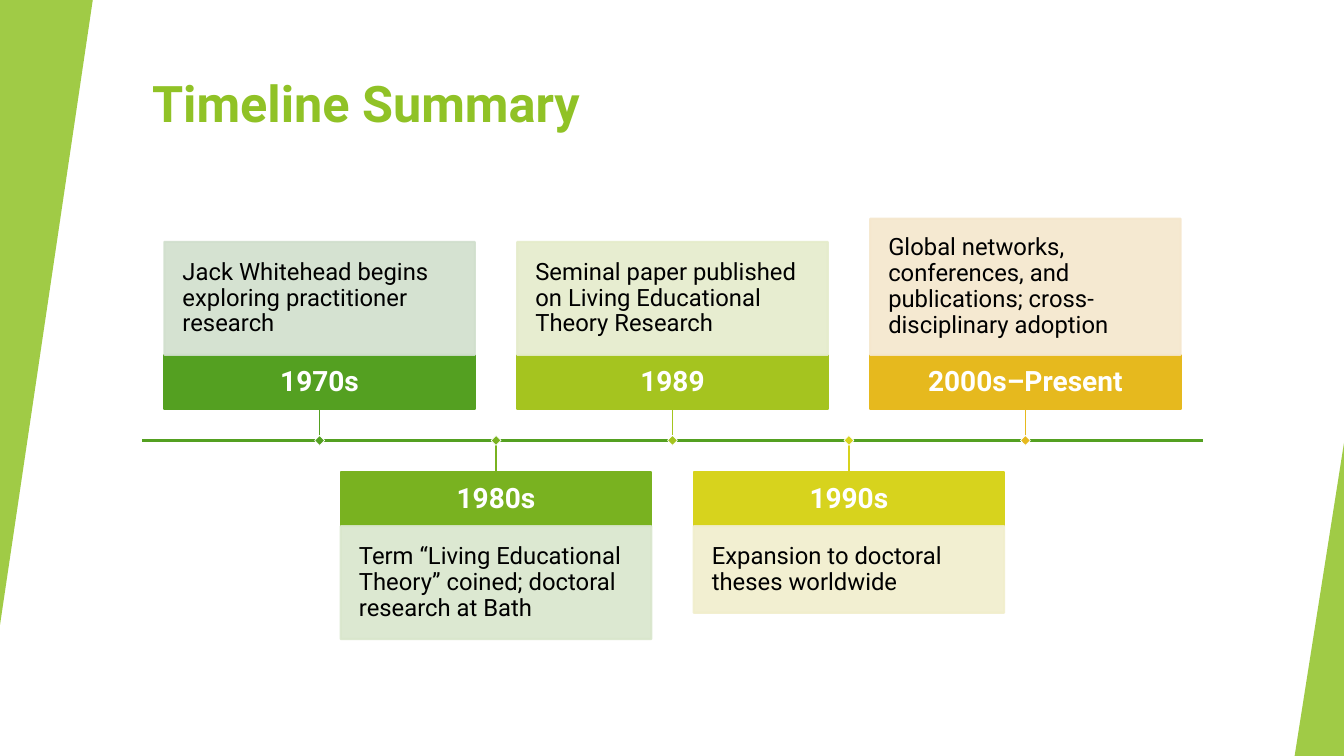
from pptx import Presentation
from pptx.dml.color import RGBColor
from pptx.enum.shapes import MSO_CONNECTOR, MSO_SHAPE
from pptx.enum.text import MSO_ANCHOR, PP_ALIGN
from pptx.oxml.ns import qn
from pptx.util import Inches, Pt
from lxml.etree import SubElement

# Content
TITLE = "Timeline Summary"
COLORS = {"accent": "90C226", "axis": "54A021", "white": "FFFFFF", "black": "000000"}
FONT = "Roboto"
# period, event, strong colour, pale colour, height of the event box
EVENTS = [
    ("1970s", "Jack Whitehead begins exploring practitioner research",
     "54A021", "D1DFCD", 1.12),
    ("1980s", "Term “Living Educational Theory” coined; doctoral research at Bath",
     "79B220", "D9E6CC", 1.12),
    ("1989", "Seminal paper published on Living Educational Theory Research",
     "A5C41F", "E5ECCB", 1.12),
    ("1990s", "Expansion to doctoral theses worldwide",
     "D7D31D", "F1EECC", 0.86),
    ("2000s–Present", "Global networks, conferences, and publications; cross-disciplinary adoption",
     "E6B91E", "F5E7CD", 1.35),
]
# left, top, width, height, rotation
EDGE_TRIANGLES = [(0, 0, 0.92, 6.2, 180), (12.84, 4.39, 0.49, 3.11, 0)]

# Layout in inches
AXIS_LEFT, AXIS_RIGHT, AXIS_Y = 1.41, 11.93, 4.37
STEP = 1.75
BOX_WIDTH, LABEL_HEIGHT, STEM, MARKER = 3.08, 0.54, 0.31, 0.07

deck = Presentation()
deck.slide_width, deck.slide_height = Inches(13.33), Inches(7.5)
page = deck.slides.add_slide(deck.slide_layouts[6])


def set_alpha(fill_parent, percent):
    color = fill_parent.find(qn("a:solidFill")).find(qn("a:srgbClr"))
    SubElement(color, qn("a:alpha")).set("val", str(percent * 1000))


def add_box(kind, left, top, width, height, fill, line=None, line_width=1.5, alpha=100):
    box = page.shapes.add_shape(kind, Inches(left), Inches(top), Inches(width), Inches(height))
    box.shadow.inherit = False
    box.fill.solid()
    box.fill.fore_color.rgb = RGBColor.from_string(fill)
    if line:
        box.line.color.rgb = RGBColor.from_string(line)
        box.line.width = Pt(line_width)
    else:
        box.line.fill.background()
    if alpha < 100:
        set_alpha(box.fill._xPr, alpha)
        if line:
            set_alpha(box.line._ln, alpha)
    return box


def add_line(start, end, color, width):
    line = page.shapes.add_connector(MSO_CONNECTOR.STRAIGHT, *map(Inches, start + end))
    line.line.color.rgb = RGBColor.from_string(color)
    line.line.width = Pt(width)
    SubElement(line._element.spPr, qn("a:effectLst"))
    return line


def write(box, text, size, color, bold=False, align=PP_ALIGN.LEFT,
          anchor=MSO_ANCHOR.MIDDLE, inset=(0.1, 0.05), spacing=0.9):
    frame = box.text_frame
    frame.word_wrap = True
    frame.vertical_anchor = anchor
    frame.margin_left = frame.margin_right = Inches(inset[0])
    frame.margin_top = frame.margin_bottom = Inches(inset[1])
    para = frame.paragraphs[0]
    para.alignment = align
    para.line_spacing = spacing
    span = para.add_run()
    span.text = text
    span.font.name = FONT
    span.font.size = Pt(size)
    span.font.bold = bold
    span.font.color.rgb = RGBColor.from_string(color)


# Title and slanted edges
title = page.shapes.add_textbox(Inches(1.41), Inches(0.67), Inches(11.15), Inches(1.2))
write(title, TITLE, 36, COLORS["accent"], bold=True, anchor=MSO_ANCHOR.TOP, spacing=1.0)
for left, top, width, height, rotation in EDGE_TRIANGLES:
    edge = add_box(MSO_SHAPE.ISOSCELES_TRIANGLE, left, top, width, height,
                   COLORS["accent"], alpha=85)
    edge.adjustments[0] = 1.0
    edge.rotation = rotation

# Timeline: events alternate above and below the axis
add_line((AXIS_LEFT, AXIS_Y), (AXIS_RIGHT, AXIS_Y), COLORS["axis"], 1.5)
middle = (AXIS_LEFT + AXIS_RIGHT) / 2
for index, (period, event, strong, pale, height) in enumerate(EVENTS):
    center = middle + (index - len(EVENTS) // 2) * STEP
    left = center - BOX_WIDTH / 2
    above = index % 2 == 0
    if above:
        label_top = AXIS_Y - STEM - LABEL_HEIGHT
        event_top = label_top - height
    else:
        label_top = AXIS_Y + STEM
        event_top = label_top + LABEL_HEIGHT

    label = add_box(MSO_SHAPE.RECTANGLE, left, label_top, BOX_WIDTH, LABEL_HEIGHT,
                    strong, line=strong)
    write(label, period, 20, COLORS["white"], bold=True, align=PP_ALIGN.CENTER,
          inset=(0.11, 0.11))
    detail = add_box(MSO_SHAPE.RECTANGLE, left, event_top, BOX_WIDTH, height,
                     pale, line=pale, alpha=90)
    write(detail, event, 17, COLORS["black"], inset=(0.18, 0.18))

    stem_top = label_top + LABEL_HEIGHT if above else label_top
    stem = add_line((center, stem_top), (center, AXIS_Y), strong, 1)
    stem.begin_connect(label, 2 if above else 0)
    marker = add_box(MSO_SHAPE.RECTANGLE, center - MARKER / 2, AXIS_Y - MARKER / 2,
                     MARKER, MARKER, strong, line=COLORS["white"], line_width=0.5)
    marker.rotation = 45

deck.save("out.pptx")
